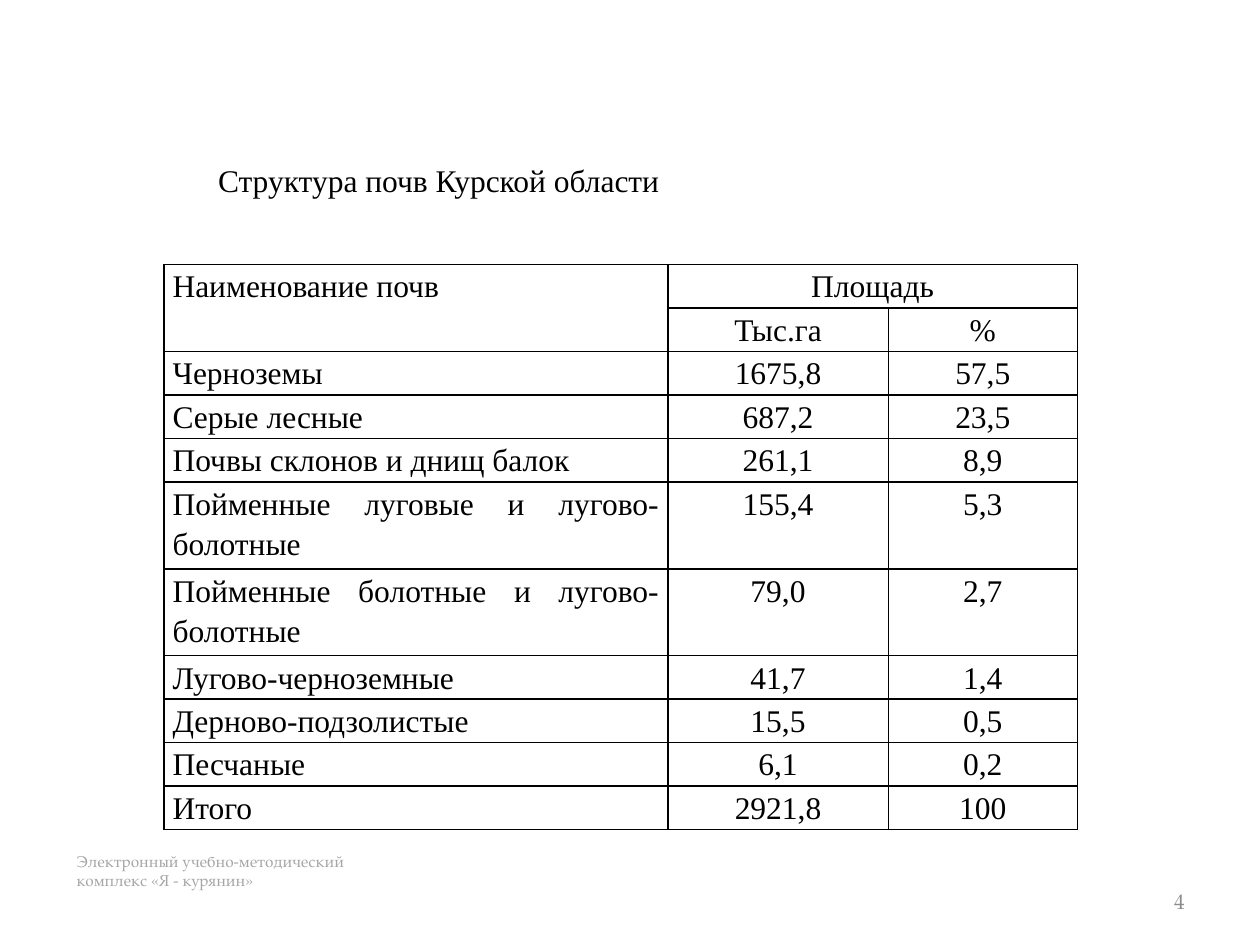
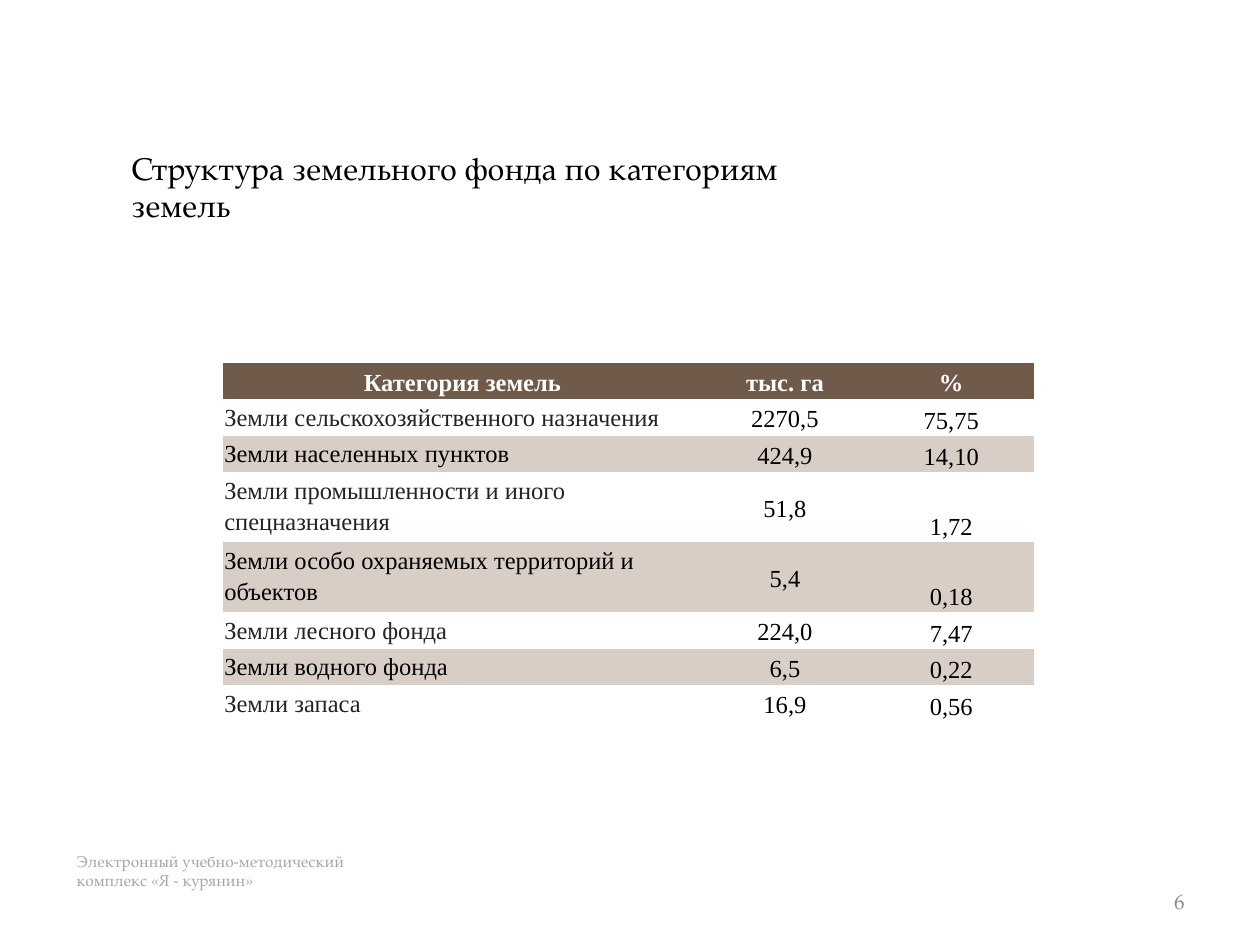
import lxml.etree
import pptx
import pptx.dml.color
import pptx.enum.text
import pptx.oxml.ns
import pptx.util

ALIGN = pptx.enum.text.PP_ALIGN
ANCHOR = pptx.enum.text.MSO_ANCHOR

# Grid of 100 columns by 75 rows; every length below is in grid units.
GRID_COLUMNS, GRID_ROWS = 100, 75
SLIDE_WIDTH, SLIDE_HEIGHT = pptx.util.Inches(10), pptx.util.Inches(7.5)

THEME = {
    "serif": "Times New Roman",
    "display": "TeX Gyre Pagella",
    "black": "000000",
    "white": "FFFFFF",
    "dark": "212529",
    "brown": "705B4A",
    "sand": "D9CEC5",
    "footer": {"size": 9, "name": "TeX Gyre Pagella", "color": "A6A6A6"},
    "number": {"size": 12, "name": "TeX Gyre Pagella", "color": "8C8C8C"},
    "title_size": 18,
    "line_spacing": 1.15,
}

FOOTER = "Электронный учебно-методический\vкомплекс «Я - курянин»"
FOOTER_BOX = (5.1, 67.1, 50, 4)
NUMBER_BOX = (71.7, 69.5, 23.3, 4)

SOILS = {
    "number": "4",
    "title": "Структура почв Курской области",
    "title_box": (11.4, 12.3, 49.6, 4),
    "title_font": THEME["serif"],
    "title_indent": 4.9,
    "origin": (13, 21),
    "columns": (40, 17.5, 15),
    "line_rows": {1: 3.45, 2: 6.9},
    "two_line_rows": (5, 6),
    "merges": (((0, 0), (1, 0)), ((0, 1), (0, 2))),
    "margins": (0.7, 0),
    "size": 18,
    "border": THEME["black"],
    "alignments": (ALIGN.JUSTIFY, ALIGN.CENTER, ALIGN.CENTER),
    "anchors": (ANCHOR.TOP, ANCHOR.TOP, ANCHOR.TOP),
    "banded": False,
    "rows": [
        ("Наименование почв", "Площадь", ""),
        ("", "Тыс.га", "%"),
        ("Черноземы", "1675,8", "57,5"),
        ("Серые лесные", "687,2", "23,5"),
        ("Почвы склонов и днищ балок", "261,1", "8,9"),
        ("Пойменные луговые и лугово-болотные", "155,4", "5,3"),
        ("Пойменные болотные и лугово-болотные", "79,0", "2,7"),
        ("Лугово-черноземные", "41,7", "1,4"),
        ("Дерново-подзолистые", "15,5", "0,5"),
        ("Песчаные", "6,1", "0,2"),
        ("Итого", "2921,8", "100"),
    ],
}

LAND = {
    "number": "6",
    "title": "Структура земельного фонда по категориям земель",
    "title_box": (9.4, 12.8, 57.5, 4),
    "title_font": THEME["display"],
    "title_indent": 0,
    "origin": (17.7, 28.8),
    "columns": (38, 13.2, 13.2),
    "line_rows": {1: 2.9, 2: 5.55},
    "two_line_rows": (3, 4),
    "merges": (),
    "margins": (0.1, 0.1),
    "size": 14,
    "border": None,
    "alignments": (ALIGN.LEFT, ALIGN.CENTER, ALIGN.CENTER),
    "anchors": (ANCHOR.TOP, ANCHOR.MIDDLE, ANCHOR.BOTTOM),
    "banded": True,
    "rows": [
        ("Категория земель", "тыс. га", "%"),
        ("Земли сельскохозяйственного назначения", "2270,5", "75,75"),
        ("Земли населенных пунктов", "424,9", "14,10"),
        ("Земли промышленности и иного спецназначения", "51,8", "1,72"),
        ("Земли особо охраняемых территорий и объектов", "5,4", "0,18"),
        ("Земли лесного фонда", "224,0", "7,47"),
        ("Земли водного фонда", "6,5", "0,22"),
        ("Земли запаса", "16,9", "0,56"),
    ],
}


def across(units):
    return round(SLIDE_WIDTH * units / GRID_COLUMNS)


def down(units):
    return round(SLIDE_HEIGHT * units / GRID_ROWS)


def to_slide(box):
    left, top, width, height = box
    return across(left), down(top), across(width), down(height)


def set_attributes(target, values):
    for name, value in values.items():
        setattr(target, name, value)


def format_font(font, size, name, color, bold=False):
    set_attributes(font, {"size": pptx.util.Pt(size), "name": name, "bold": bold})
    font.color.rgb = pptx.dml.color.RGBColor.from_string(color)


def write(shape, text, font, alignment=ALIGN.LEFT, anchor=ANCHOR.TOP):
    frame = shape.text_frame
    frame.text = text
    set_attributes(frame, {
        "word_wrap": True,
        "vertical_anchor": anchor,
        "auto_size": pptx.enum.text.MSO_AUTO_SIZE.NONE,
    })
    paragraph = frame.paragraphs[0]
    paragraph.alignment = alignment
    for run in paragraph.runs:
        format_font(run.font, **font)
    return paragraph


def add_title(slide, content):
    title = slide.shapes.title
    edges = zip(("left", "top", "width", "height"), to_slide(content["title_box"]))
    set_attributes(title, dict(edges))
    font = {"size": THEME["title_size"], "name": content["title_font"],
            "color": THEME["black"]}
    paragraph = write(title, content["title"], font, anchor=ANCHOR.MIDDLE)
    properties = paragraph._p.get_or_add_pPr()
    properties.set("indent", str(across(content["title_indent"])))


def add_footer(slide, number):
    footer = slide.shapes.add_textbox(*to_slide(FOOTER_BOX))
    write(footer, FOOTER, THEME["footer"])
    number_box = slide.shapes.add_textbox(*to_slide(NUMBER_BOX))
    write(number_box, number, THEME["number"], ALIGN.RIGHT, ANCHOR.MIDDLE)


def set_borders(cell, color):
    """Draw a one-point line on all four sides, or hide them if color is None."""
    properties = cell._tc.get_or_add_tcPr()
    qn = pptx.oxml.ns.qn
    for side in ("a:lnL", "a:lnR", "a:lnT", "a:lnB"):
        line = lxml.etree.SubElement(properties, qn(side), w=str(pptx.util.Pt(1)))
        if color is None:
            lxml.etree.SubElement(line, qn("a:noFill"))
        else:
            fill = lxml.etree.SubElement(line, qn("a:solidFill"))
            lxml.etree.SubElement(fill, qn("a:srgbClr"), val=color)


def cell_look(content, row, column):
    """Return fill, text colour, bold, alignment and anchor of a cell."""
    alignment = content["alignments"][column]
    anchor = content["anchors"][column]
    if not content["banded"]:
        return None, THEME["black"], False, alignment, anchor
    if row == 0:
        return THEME["brown"], THEME["white"], True, ALIGN.CENTER, ANCHOR.MIDDLE
    if row % 2 == 0:
        return THEME["sand"], THEME["black"], False, alignment, anchor
    color = THEME["dark"] if column == 0 else THEME["black"]
    return THEME["white"], color, False, alignment, anchor


def fill_cell(cell, text, content, row, column):
    fill, color, bold, alignment, anchor = cell_look(content, row, column)
    side, edge = content["margins"]
    set_attributes(cell, {
        "text": text,
        "vertical_anchor": anchor,
        "margin_left": across(side),
        "margin_right": across(side),
        "margin_top": down(edge),
        "margin_bottom": down(edge),
    })
    set_borders(cell, content["border"])
    if fill is None:
        cell.fill.background()
    else:
        cell.fill.solid()
        cell.fill.fore_color.rgb = pptx.dml.color.RGBColor.from_string(fill)
    paragraph = cell.text_frame.paragraphs[0]
    set_attributes(paragraph, {"alignment": alignment,
                               "line_spacing": THEME["line_spacing"]})
    for run in paragraph.runs:
        format_font(run.font, content["size"], THEME["serif"], color, bold)


def add_data_table(slide, content):
    rows, columns = content["rows"], content["columns"]
    heights = [content["line_rows"][2 if index in content["two_line_rows"] else 1]
               for index in range(len(rows))]
    box = (*content["origin"], sum(columns), sum(heights))
    table = slide.shapes.add_table(len(rows), len(columns), *to_slide(box)).table
    set_attributes(table, {"first_row": False, "horz_banding": False})
    for column, width in zip(table.columns, columns):
        column.width = across(width)
    for row, height in zip(table.rows, heights):
        row.height = down(height)
    for row, texts in enumerate(rows):
        for column, text in enumerate(texts):
            fill_cell(table.cell(row, column), text, content, row, column)
    for first, last in content["merges"]:
        table.cell(*first).merge(table.cell(*last))


def main():
    presentation = pptx.Presentation()
    set_attributes(presentation, {"slide_width": SLIDE_WIDTH,
                                  "slide_height": SLIDE_HEIGHT})
    title_only = presentation.slide_layouts.get_by_name("Title Only")
    for content in (SOILS, LAND):
        slide = presentation.slides.add_slide(title_only)
        add_footer(slide, content["number"])
        add_data_table(slide, content)
        add_title(slide, content)
    presentation.save("out.pptx")


if __name__ == "__main__":
    main()
